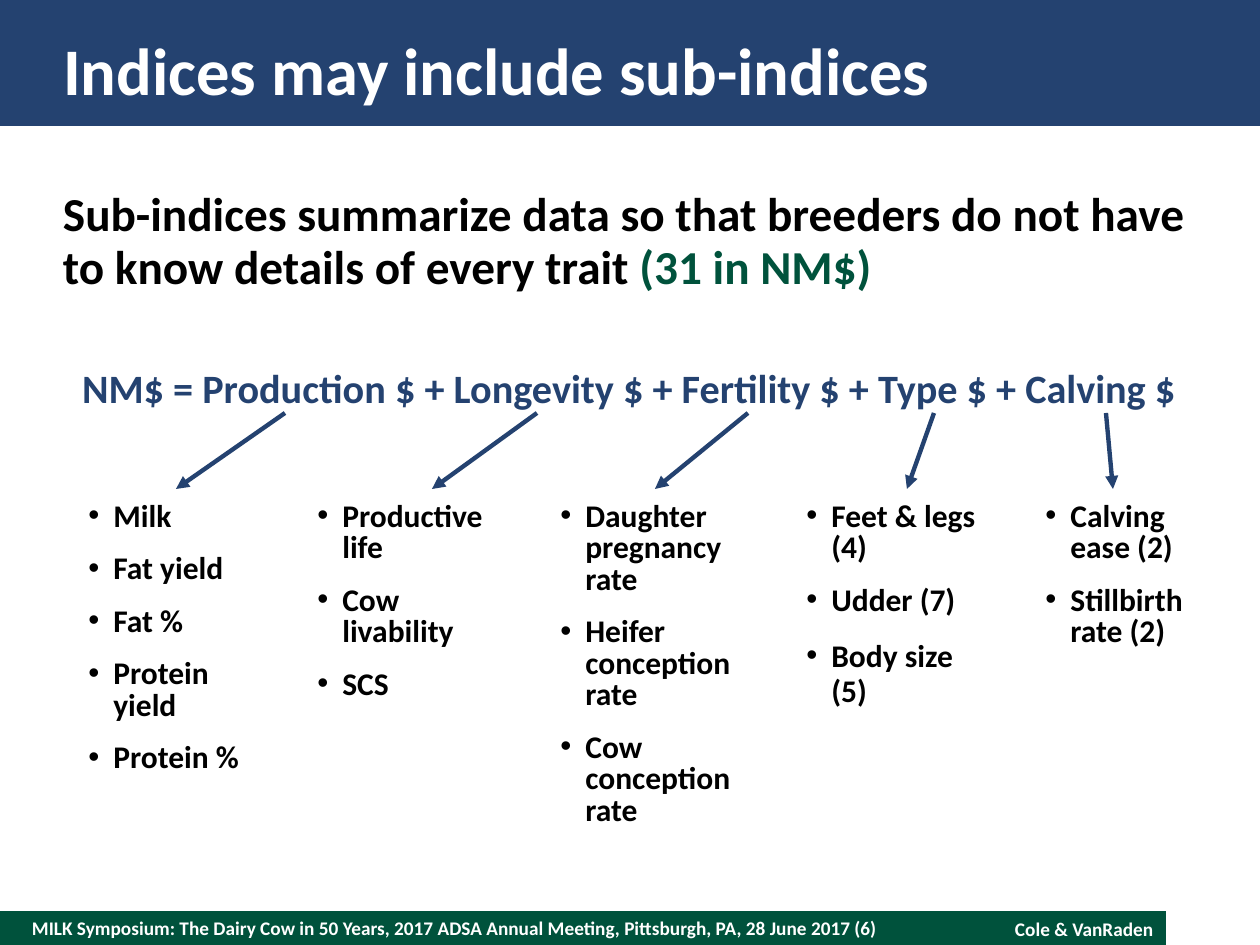
from lxml import etree
from pptx import Presentation
from pptx.dml.color import RGBColor
from pptx.enum.shapes import MSO_CONNECTOR, MSO_SHAPE
from pptx.enum.text import MSO_ANCHOR, MSO_AUTO_SIZE, PP_ALIGN
from pptx.oxml.ns import qn
from pptx.util import Emu, Pt

NAVY = RGBColor(0x24, 0x42, 0x70)
GREEN = RGBColor(0x00, 0x52, 0x3C)
BLACK = RGBColor(0, 0, 0)
WHITE = RGBColor(255, 255, 255)
LEFT, CENTER, RIGHT = PP_ALIGN.LEFT, PP_ALIGN.CENTER, PP_ALIGN.RIGHT
TOP, MIDDLE = MSO_ANCHOR.TOP, MSO_ANCHOR.MIDDLE
RECT, LINE = MSO_SHAPE.RECTANGLE, MSO_CONNECTOR.STRAIGHT
FONT = "Calibri"


def px(n):
    return Emu(round(n * 914400 / 126))


class Deck:
    def __init__(self, wide, high):
        self.prs = Presentation()
        self.prs.slide_width, self.prs.slide_height = px(wide), px(high)
        self.slide = self.prs.slides.add_slide(self.prs.slide_layouts[5])
        self.shapes = self.slide.shapes

    def style(self, para, size, color, align=LEFT):
        para.alignment = align
        for run in para.runs:
            font = run.font
            font.name, font.size, font.bold = FONT, Pt(size), True
            font.color.rgb = color

    def frame(self, shape, anchor, inset):
        frame = shape.text_frame
        frame.word_wrap = True
        frame.auto_size = MSO_AUTO_SIZE.NONE
        frame.vertical_anchor = anchor
        if not inset:
            frame.margin_left = frame.margin_right = 0
            frame.margin_top = frame.margin_bottom = 0
        return frame

    def band(self, x, y, w, h, color):
        bar = self.shapes.add_shape(RECT, px(x), px(y), px(w), px(h))
        bar.shadow.inherit = False
        bar.fill.solid()
        bar.fill.fore_color.rgb = color
        bar.line.fill.background()

    def title(self, text, x, y, w, h, size, color):
        head = self.shapes.title
        head.left, head.top, head.width, head.height = px(x), px(y), px(w), px(h)
        frame = self.frame(head, MIDDLE, False)
        frame.text = text
        self.style(frame.paragraphs[0], size, color)
        # Bring the title in front of the bands
        head.element.getparent().append(head.element)

    def text(self, text, x, y, w, h, size, color, align=LEFT, anchor=TOP, inset=True):
        box = self.shapes.add_textbox(px(x), px(y), px(w), px(h))
        frame = self.frame(box, anchor, inset)
        frame.text = text
        for para in frame.paragraphs:
            self.style(para, size, color, align)
        return frame

    def bullets(self, items, x, y, w, h, last):
        frame = self.text("\n".join(items), x, y, w, h, 18, BLACK)
        for para in frame.paragraphs:
            props = para._p.get_or_add_pPr()
            props.set("marL", str(px(25)))
            props.set("indent", str(-px(25)))
            etree.SubElement(props, qn("a:buFont")).set("typeface", "Arial")
            etree.SubElement(props, qn("a:buChar")).set("char", "•")
            para.line_spacing, para.space_after = Pt(18), Pt(12)
        para.line_spacing = Pt(last)

    def arrow(self, x1, y1, x2, y2, color):
        line = self.shapes.add_connector(LINE, px(x1), px(y1), px(x2), px(y2))
        line.line.color.rgb = color
        line.line.width = Pt(2.5)
        etree.SubElement(line.line._get_or_add_ln(), qn("a:tailEnd")).set("type", "triangle")
        etree.SubElement(line._element.spPr, qn("a:effectLst"))


def main():
    deck = Deck(1260, 945)

    # Bands and footer
    deck.band(0, 911, 1166, 34, GREEN)
    deck.band(0, 0, 1260, 126, NAVY)
    deck.text("MILK Symposium: The Dairy Cow in 50 Years, 2017 ADSA Annual Meeting, "
              "Pittsburgh, PA, 28 June 2017 (6)",
              32, 911, 882, 34, 11, WHITE, anchor=MIDDLE, inset=False)
    deck.text("Cole & VanRaden", 914, 911, 252, 37, 11, WHITE, RIGHT)

    # Title and lead
    deck.title("Indices may include sub-indices", 63, 25, 1134, 88, 38, WHITE)
    lead = deck.text("Sub-indices summarize data so that breeders do not have "
                     "to know details of every trait ",
                     63, 189, 1134, 126, 27, BLACK, inset=False).paragraphs[0]
    lead.line_spacing = Pt(30)
    lead.add_run().text = "(31 in NM$)"
    deck.style(lead, 27, BLACK)
    lead.runs[1].font.color.rgb = GREEN

    # Formula
    deck.text("NM$ = Production $ + Longevity $ + Fertility $ + Type $ + Calving $",
              38, 357, 1184, 62, 23, NAVY, CENTER)

    # Traits: list left, width, height, last line pitch, arrow start and end, items
    groups = [
        (76, 202, 289, 18, 285, 176,
         ["Milk", "Fat yield", "Fat %", "Protein yield", "Protein %"]),
        (305, 202, 214, 18, 537, 432,
         ["Productive life", "Cow livability", "SCS"]),
        (548, 202, 341, 18, 748, 655,
         ["Daughter pregnancy rate", "Heifer conception rate", "Cow conception rate"]),
        (794, 202, 154, 20, 934, 907,
         ["Feet & legs (4)", "Udder (7)", "Body size (5)"]),
        (1033, 171, 161, 18, 1106, 1113,
         ["Calving ease (2)", "Stillbirth rate (2)"]),
    ]
    for x, w, h, last, start, end, items in groups:
        deck.bullets(items, x, 496, w, h, last)
        deck.arrow(start, 413, end, 489, NAVY)

    deck.prs.save("out.pptx")


if __name__ == "__main__":
    main()
